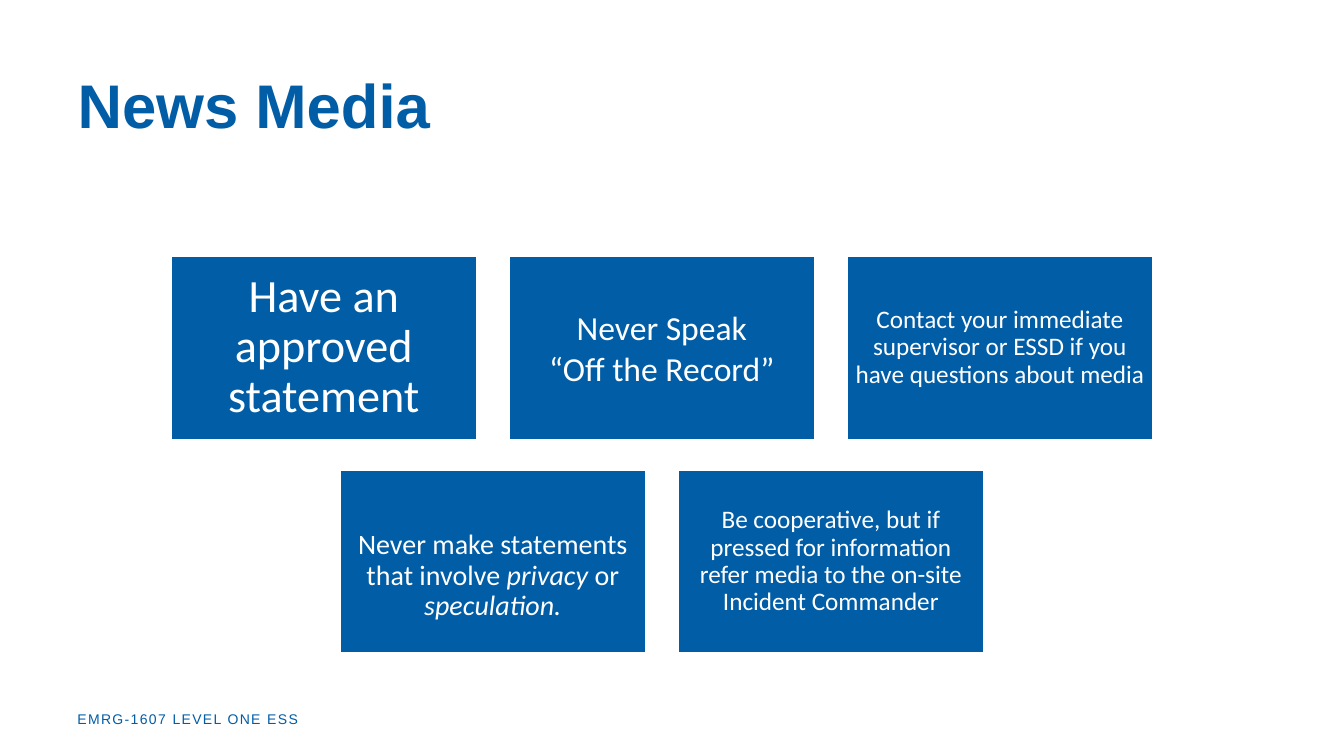
from dataclasses import dataclass

import pptx
import pptx.dml.color
import pptx.enum.shapes
import pptx.enum.text
import pptx.util
from pptx.util import Cm


@dataclass(frozen=True)
class Theme:
    blue = pptx.dml.color.RGBColor(0x00, 0x5D, 0xA6)
    white = pptx.dml.color.RGBColor(0xFF, 0xFF, 0xFF)
    heading_font = "Arial"
    card_font = "Calibri"
    title_size = 44
    footer_size = 10
    huge = 33
    large = 24
    medium = 20
    small = 18


def style(paragraph, font_name, size, color):
    paragraph.font.name = font_name
    paragraph.font.size = pptx.util.Pt(size)
    paragraph.font.color.rgb = color


theme = Theme()
deck = pptx.Presentation()
deck.slide_width, deck.slide_height = Cm(33.87), Cm(19.05)
slide = deck.slides.add_slide(deck.slide_layouts[5])

# Title
title = slide.shapes.title
title.left, title.top, title.width, title.height = Cm(1.7), Cm(1.02), Cm(30.48), Cm(3.43)
title.text_frame.text = "News Media"
title.text_frame.vertical_anchor = pptx.enum.text.MSO_ANCHOR.MIDDLE
heading = title.text_frame.paragraphs[0]
style(heading, theme.heading_font, theme.title_size, theme.blue)
heading.font.bold = True
heading.alignment = pptx.enum.text.PP_ALIGN.LEFT
heading.line_spacing = 0.9

# Course footer
footer = slide.shapes.add_textbox(Cm(1.7), Cm(17.78), Cm(15.24), Cm(0.69))
footer.text_frame.word_wrap = True
course = footer.text_frame.paragraphs[0]
course_run = course.add_run()
course_run.text = "EMRG-1607 LEVEL ONE ESS"
style(course, theme.heading_font, theme.footer_size, theme.blue)
course_run._r.get_or_add_rPr().set("spc", "100")  # letter spacing of 1 pt

# Advice cards: size, line spacing, inset, extra top inset, paragraphs of (text, italic)
advice_rows = [
    [
        (theme.huge, 0.9, 0.36, 0, [[("Have an approved statement", False)]]),
        (theme.large, 1.0, 0.25, 0,
         [[("Never Speak", False)], [("“Off the Record”", False)]]),
        (theme.small, 0.9, 0.18, 0,
         [[("Contact your immediate supervisor or ESSD if you have questions about media", False)]]),
    ],
    [
        (theme.medium, 0.9, 0.15, 0.73,
         [[("Never make statements that involve ", False), ("privacy", True),
           (" or ", False), ("speculation.", True)]]),
        (theme.small, 0.9, 0.18, 0,
         [[("Be cooperative, but if pressed for information refer media "
            "to the on-site Incident Commander", False)]]),
    ],
]
card_width, card_height, gap = 7.7, 4.62, 0.82
first_top, row_pitch, center_x = 6.45, 5.39, 16.68

for row_index, row in enumerate(advice_rows):
    row_width = len(row) * card_width + (len(row) - 1) * gap
    row_left = center_x - row_width / 2
    top = first_top + row_index * row_pitch
    for column, (size, spacing, inset, extra_top, paragraphs) in enumerate(row):
        left = row_left + column * (card_width + gap)
        card = slide.shapes.add_shape(
            pptx.enum.shapes.MSO_SHAPE.RECTANGLE,
            Cm(left), Cm(top), Cm(card_width), Cm(card_height))
        card.shadow.inherit = False
        card.fill.solid()
        card.fill.fore_color.rgb = theme.blue
        card.line.color.rgb = theme.white
        card.line.width = pptx.util.Pt(1)

        frame = card.text_frame
        frame.word_wrap = True
        frame.vertical_anchor = pptx.enum.text.MSO_ANCHOR.MIDDLE
        frame.margin_left = frame.margin_right = frame.margin_bottom = Cm(inset)
        frame.margin_top = Cm(inset + extra_top)
        for index, pieces in enumerate(paragraphs):
            advice = frame.add_paragraph() if index else frame.paragraphs[0]
            advice.alignment = pptx.enum.text.PP_ALIGN.CENTER
            advice.line_spacing = spacing
            style(advice, theme.card_font, size, theme.white)
            for text, italic in pieces:
                run = advice.add_run()
                run.text = text
                if italic:
                    run.font.italic = True

deck.save("out.pptx")
